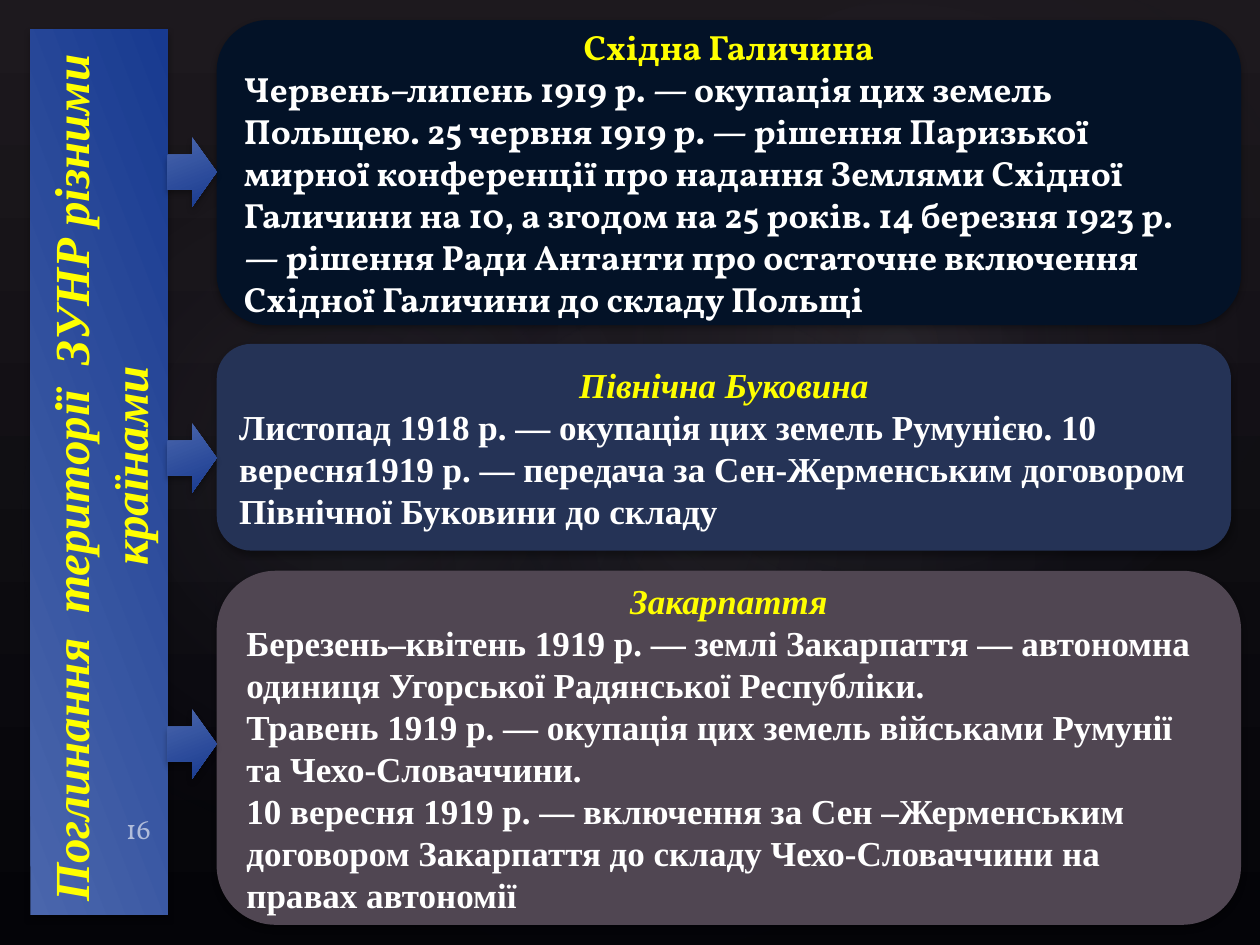
from pptx import Presentation
from pptx.dml.color import RGBColor
from pptx.enum.shapes import MSO_SHAPE as Shape
from pptx.enum.text import MSO_ANCHOR as Anchor, MSO_AUTO_SIZE as AutoSize, PP_ALIGN as Align
from pptx.oxml import parse_xml
from pptx.oxml.ns import nsdecls
from pptx.util import Inches, Pt

WHITE = RGBColor(0xFF, 0xFF, 0xFF)
YELLOW = RGBColor(0xFF, 0xFF, 0x00)
BLUE_LIGHT = RGBColor(0x4A, 0x66, 0xAC)
BLUE_DARK = RGBColor(0x18, 0x3A, 0x90)
NAVY = RGBColor(0x24, 0x28, 0x52)
GLOW = RGBColor(0xC4, 0xBC, 0xC6)
BACK_TOP = RGBColor(0x1D, 0x19, 0x1E)
BACK_BOTTOM = RGBColor(0x04, 0x04, 0x08)
CARD_NIGHT = RGBColor(0x03, 0x12, 0x27)
CARD_BLUE = RGBColor(0x25, 0x33, 0x56)
CARD_PLUM = RGBColor(0x50, 0x46, 0x52)

SERIF, DISPLAY = "Times New Roman", "Vollkorn"
LINEAR = '<a:lin ang="4140000" scaled="0"/>'
RADIAL = ('<a:path path="circle"><a:fillToRect l="50000" t="50000" '
          'r="50000" b="50000"/></a:path>')

GLOWS = [
    ((1.5, 1.14, 7.92, 6.24), 328.7, 7),
    ((-0.3, 1.28, 6.06, 4.9), 294.3, 8),
    ((3.58, 0.13, 7.09, 5.2), 328.7, 8),
]
CARDS = [
    ((1.72, 0.16, 8.13, 2.42), CARD_NIGHT, DISPLAY, False, "Східна Галичина", [
        "Червень–липень 1919 р. — окупація цих земель Польщею. 25 червня 1919 р. — "
        "рішення Паризької мирної конференції про надання Землями Східної Галичини "
        "на 10, а згодом на 25 років. 14 березня 1923 р. — рішення Ради Антанти про "
        "остаточне включення Східної Галичини до складу Польщі"]),
    ((1.72, 2.73, 8.05, 1.64), CARD_BLUE, SERIF, True, "Північна Буковина", [
        "Листопад 1918 р. — окупація цих земель Румунією. 10 вересня1919 р. — "
        "передача за Сен-Жерменським договором Північної Буковини до складу"]),
    ((1.72, 4.53, 8.13, 2.81), CARD_PLUM, SERIF, True, "Закарпаття", [
        "Березень–квітень 1919 р. — землі Закарпаття — автономна одиниця "
        "Угорської Радянської Республіки.",
        "Травень 1919 р. — окупація цих земель військами Румунії та Чехо-Словаччини.",
        "10 вересня 1919 р. — включення за Сен –Жерменським договором Закарпаття "
        "до складу Чехо-Словаччини на правах автономії"]),
]


def set_all(target, values):
    """Set every attribute named in a dict of format values."""
    for name, value in values.items():
        setattr(target, name, value)


def place(shape, box):
    """Move and size a shape from a box in inches."""
    set_all(shape, dict(zip(("left", "top", "width", "height"), map(Inches, box))))


def add_gradient(shape, stops, direction):
    """Give a shape a gradient of (percent, colour, opacity) stops."""
    stop_xml = "".join(
        f'<a:gs pos="{position * 1000}"><a:srgbClr val="{color}">'
        f'<a:alpha val="{opacity * 1000}"/></a:srgbClr></a:gs>'
        for position, color, opacity in stops)
    shape._element.spPr.append(parse_xml(
        f'<a:gradFill {nsdecls("a")} rotWithShape="1"><a:gsLst>{stop_xml}</a:gsLst>'
        f'{direction}</a:gradFill>'))


def add_blue_gradient(shape):
    """Give a shape the blue gradient of the bar and arrows."""
    add_gradient(shape, [(0, BLUE_LIGHT, 100), (100, BLUE_DARK, 100)], LINEAR)


def add_soft_shadow(shape):
    """Remove the outline and add a soft shadow below a shape."""
    shape.line.fill.background()
    shape._element.spPr.append(parse_xml(
        f'<a:effectLst {nsdecls("a")}><a:outerShdw blurRad="{Pt(3.5)}" dist="{Pt(2.2)}" '
        'dir="5400000" rotWithShape="0"><a:srgbClr val="000000"><a:alpha val="32000"/>'
        '</a:srgbClr></a:outerShdw></a:effectLst>'))


def write(paragraph, text, color, alignment, **font):
    """Write one formatted run in a paragraph and return it."""
    paragraph.alignment = alignment
    run = paragraph.add_run()
    run.text = text
    set_all(run.font, font)
    run.font.color.rgb = color
    return run


def add_glow(slide, box, rotation, opacity):
    """Add a faint round glow behind everything else."""
    shape = slide.shapes.add_shape(Shape.OVAL, *map(Inches, box))
    shape.rotation = rotation
    add_gradient(shape, [(0, GLOW, opacity), (58, NAVY, 0), (100, NAVY, 0)], RADIAL)
    shape.line.fill.background()
    shape.shadow.inherit = False


def add_title_bar(slide):
    """Turn the title placeholder into the upright bar."""
    title = slide.shapes.title
    place(title, (-2.73, 3.2, 7.03, 1.09))
    title.rotation = 270
    title._element.spPr.append(parse_xml(
        f'<a:prstGeom {nsdecls("a")} prst="roundRect"><a:avLst/></a:prstGeom>'))
    add_blue_gradient(title)
    add_soft_shadow(title)
    set_all(title.text_frame, {"word_wrap": True, "auto_size": AutoSize.NONE,
                               "vertical_anchor": Anchor.MIDDLE})
    write(title.text_frame.paragraphs[0], "Поглинання  території  ЗУНР різними   країнами",
          YELLOW, Align.CENTER, size=Pt(28), name=SERIF, bold=True, italic=True)
    slide.shapes._spTree.append(title._element)


def add_card(slide, box, color, font_name, italic, heading, lines):
    """Add a rounded card with a centred heading and body lines."""
    card = slide.shapes.add_shape(Shape.ROUNDED_RECTANGLE, *map(Inches, box))
    card.fill.solid()
    card.fill.fore_color.rgb = color
    add_soft_shadow(card)
    frame = card.text_frame
    set_all(frame, {"word_wrap": True, "vertical_anchor": Anchor.MIDDLE})
    font = {"size": Pt(20), "name": font_name, "bold": True}
    write(frame.paragraphs[0], heading, YELLOW, Align.CENTER, italic=italic, **font)
    for line in lines:
        write(frame.add_paragraph(), line, WHITE, Align.LEFT, **font)


def add_arrow(slide, top):
    """Add an arrow from the bar to a card."""
    arrow = slide.shapes.add_shape(
        Shape.RIGHT_ARROW, *map(Inches, (1.33, top, 0.39, 0.55)))
    add_blue_gradient(arrow)
    add_soft_shadow(arrow)


def add_page_number(slide, number):
    """Add the translucent page number."""
    frame = slide.shapes.add_textbox(*map(Inches, (0.9, 6.39, 2.33, 0.33))).text_frame
    set_all(frame, {"word_wrap": True, "vertical_anchor": Anchor.BOTTOM,
                    "margin_bottom": Inches(0.01)})
    run = write(frame.paragraphs[0], number, WHITE, Align.LEFT, size=Pt(16), name=DISPLAY)
    color = run._r.rPr.find(".//{*}srgbClr")
    color.append(parse_xml(f'<a:alpha {nsdecls("a")} val="60000"/>'))


def set_background(slide):
    """Fill the background with a dark gradient from top to bottom."""
    fill = slide.background.fill
    fill.gradient()
    fill.gradient_angle = 270
    for stop, color in zip(fill.gradient_stops, (BACK_TOP, BACK_BOTTOM)):
        stop.color.rgb = color


def main():
    """Build the slide and save it."""
    presentation = Presentation()
    set_all(presentation, {"slide_width": Inches(10), "slide_height": Inches(7.5)})
    slide = presentation.slides.add_slide(presentation.slide_layouts.get_by_name("Title Only"))
    set_background(slide)
    for glow in GLOWS:
        add_glow(slide, *glow)
    add_title_bar(slide)
    for card in CARDS:
        add_card(slide, *card)
    for index in range(len(CARDS)):
        add_arrow(slide, 1.09 + 2.27 * index)
    add_page_number(slide, "16")
    presentation.save("out.pptx")


if __name__ == "__main__":
    main()
